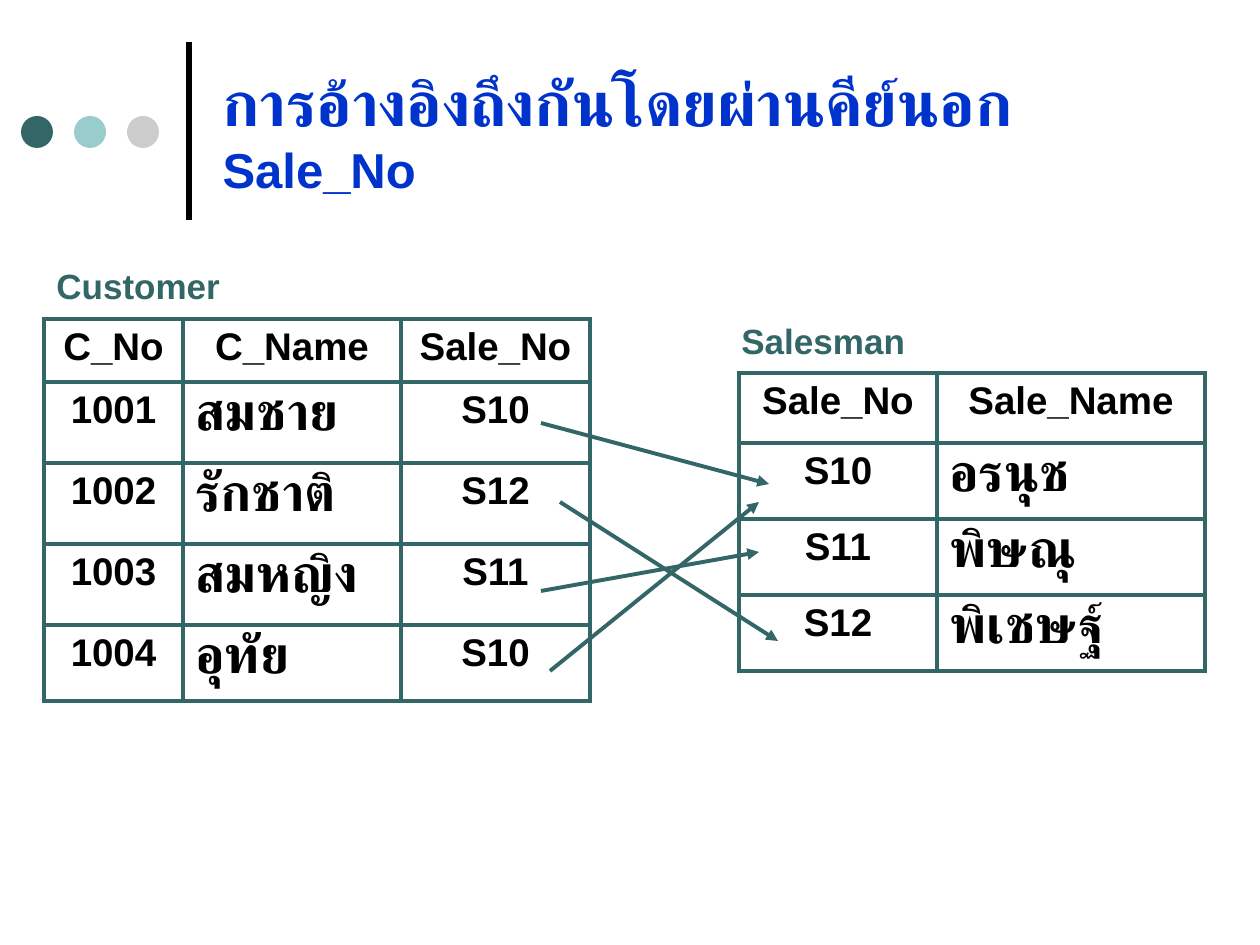
from lxml import etree
from pptx import Presentation, util as u
from pptx.dml.color import RGBColor
from pptx.enum import shapes, text
from pptx.oxml import parse_xml
from pptx.oxml.ns import nsdecls, qn

# Content
TITLE = [("การอ้างอิงถึงกันโดยผ่านคีย์นอก ", "title"), ("Sale_No", "subtitle")]
DOTS = ["336666", "99CCCC", "CCCCCC"]
TABLES = [
    dict(label="Customer", label_at=(44, 258), at=(44, 319),
         cols=[139, 218, 189], rows=[63, 81, 81, 81, 76], name_col=1,
         data=[("C_No", "C_Name", "Sale_No"),
               ("1001", "สมชาย", "S10"),
               ("1002", "รักชาติ", "S12"),
               ("1003", "สมหญิง", "S11"),
               ("1004", "อุทัย", "S10")]),
    dict(label="Salesman", label_at=(729, 313), at=(739, 373),
         cols=[198, 268], rows=[70, 76, 76, 76], name_col=1,
         data=[("Sale_No", "Sale_Name"),
               ("S10", "อรนุช"),
               ("S11", "พิษณุ"),
               ("S12", "พิเชษฐ์")]),
]
# Foreign key to primary key: start x, y, end x, y
REFERENCES = [(541, 423, 769, 484), (541, 591, 759, 552),
              (560, 502, 778, 641), (550, 671, 759, 502)]
THEME = dict(font="Arial", ink="000000", title_ink="0033CC", accent="336666",
             size=dict(title=36, subtitle=28, label=20, cell=22, name=30))


def px(n):
    return u.Emu(round(n * 914400 / 126))


def style(font, size, color):
    font.name, font.bold = THEME["font"], True
    font.size = u.Pt(THEME["size"][size])
    font.color.rgb = RGBColor.from_string(color)


def add_line(ends, color, width, arrow=False):
    line = slide.shapes.add_connector(shapes.MSO_CONNECTOR.STRAIGHT, *map(px, ends))
    line.line.color.rgb = RGBColor.from_string(color)
    line.line.width = u.Pt(width)
    if arrow:
        etree.SubElement(line.line._get_or_add_ln(), qn("a:tailEnd"), type="triangle")
    etree.SubElement(line._element.spPr, qn("a:effectLst"))


def set_borders(cell, color, width):
    for i, side in enumerate("LRTB"):
        cell._tc.get_or_add_tcPr().insert(i, parse_xml(
            f'<a:ln{side} {nsdecls("a")} w="{u.Pt(width)}"><a:solidFill>'
            f'<a:srgbClr val="{color}"/></a:solidFill></a:ln{side}>'))


def add_label(words, at):
    box = slide.shapes.add_textbox(*map(px, (*at, 190, 55)))
    tf = box.text_frame
    tf.word_wrap = False
    tf.auto_size = text.MSO_AUTO_SIZE.SHAPE_TO_FIT_TEXT
    p = tf.paragraphs[0]
    p.text = words
    style(p.font, "label", THEME["accent"])


def add_grid(at, cols, rows, data, name_col):
    frame = slide.shapes.add_table(len(rows), len(cols),
                                   *map(px, (*at, sum(cols), sum(rows))))
    table = frame.table
    table.first_row = table.horz_banding = False
    for col, width in zip(table.columns, cols):
        col.width = px(width)
    for r, (row, height) in enumerate(zip(table.rows, rows)):
        row.height = px(height)
        for c, cell in enumerate(row.cells):
            is_name = r > 0 and c == name_col
            cell.fill.background()
            set_borders(cell, THEME["accent"], 3)
            p = cell.text_frame.paragraphs[0]
            p.text = data[r][c]
            p.alignment = text.PP_ALIGN.LEFT if is_name else text.PP_ALIGN.CENTER
            style(p.font, "name" if is_name else "cell", THEME["ink"])


prs = Presentation()
prs.slide_width, prs.slide_height = u.Inches(10), u.Inches(7.5)
slide = prs.slides.add_slide(prs.slide_layouts[5])

# Title
title = slide.shapes.title
title.left, title.top, title.width, title.height = map(px, (210, 26, 966, 210))
tf = title.text_frame
tf.word_wrap = True
tf.auto_size = text.MSO_AUTO_SIZE.NONE
tf.vertical_anchor = text.MSO_ANCHOR.MIDDLE
p = tf.paragraphs[0]
p.alignment = text.PP_ALIGN.LEFT
for words, size in TITLE:
    r = p.add_run()
    r.text = words
    style(r.font, size, THEME["title_ink"])

# Title rule and dots
add_line((189, 220, 189, 42), THEME["ink"], 3)
for i, color in enumerate(DOTS):
    sp = slide.shapes.add_shape(shapes.MSO_SHAPE.OVAL,
                                *map(px, (21 + 53 * i, 116, 32, 32)))
    sp.shadow.inherit = False
    sp.fill.solid()
    sp.fill.fore_color.rgb = RGBColor.from_string(color)
    sp.line.fill.background()

# Tables, then the references between them
for t in TABLES:
    add_grid(t["at"], t["cols"], t["rows"], t["data"], t["name_col"])
    add_label(t["label"], t["label_at"])
for ends in REFERENCES:
    add_line(ends, THEME["accent"], 2.25, arrow=True)

prs.save("out.pptx")
